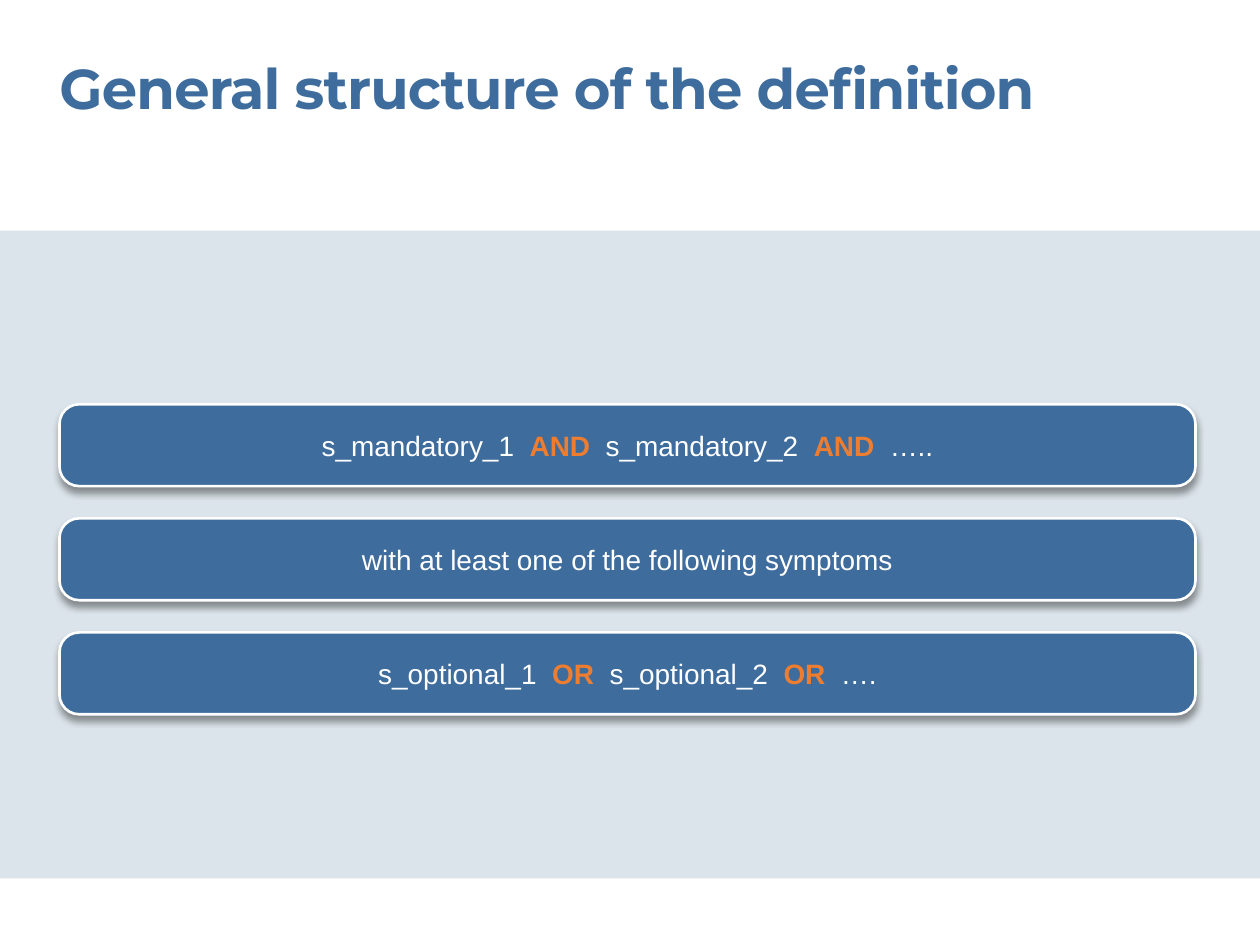
from lxml.etree import SubElement
from pptx import Presentation
from pptx.dml.color import RGBColor
from pptx.enum.shapes import MSO_SHAPE
from pptx.enum.text import MSO_ANCHOR, MSO_AUTO_SIZE, PP_ALIGN
from pptx.oxml.ns import qn
from pptx.util import Cm, Pt

BLUE, ORANGE, WHITE, PALE = "3D6C9D", "ED7D31", "FFFFFF", "DBE4EA"
OPERATORS = ("AND", "OR")
RULES = [
    ["s_mandatory_1  ", "AND", "  s_mandatory_2  ", "AND", "  ….."],
    ["with at least one of the following symptoms"],
    ["s_optional_1  ", "OR", "  s_optional_2  ", "OR", "  …."],
]


def color(value):
    return RGBColor.from_string(value)


def add_text(paragraph, text, *, size, font, fill, bold=False, spacing=None):
    run = paragraph.add_run()
    run.text = text
    run.font.size = Pt(size)
    run.font.name = font
    run.font.bold = bold
    run.font.color.rgb = color(fill)
    if spacing is not None:
        run._r.get_or_add_rPr().set("spc", str(round(spacing * 100)))


class DefinitionSlide:
    """Draws the elements of the definition slide in one shared style."""

    heading_font = "Montserrat"
    body_font = "Arial"

    def __init__(self, slide):
        self.slide = slide

    def block(self, kind, left, top, width, height, fill):
        shape = self.slide.shapes.add_shape(
            kind, Cm(left), Cm(top), Cm(width), Cm(height))
        shape.shadow.inherit = False
        shape.fill.solid()
        shape.fill.fore_color.rgb = color(fill)
        shape.line.fill.background()
        return shape

    def band(self, left, top, width, height):
        return self.block(MSO_SHAPE.RECTANGLE, left, top, width, height, PALE)

    def title(self, text, left, top, width, height):
        box = self.slide.shapes.add_textbox(
            Cm(left), Cm(top), Cm(width), Cm(height))
        frame = box.text_frame
        frame.word_wrap = True
        frame.auto_size = MSO_AUTO_SIZE.SHAPE_TO_FIT_TEXT
        frame.margin_left = frame.margin_right = 0
        frame.margin_top = frame.margin_bottom = 0
        add_text(frame.paragraphs[0], text, size=32, font=self.heading_font,
                 fill=BLUE, bold=True, spacing=-0.5)

    def rule(self, parts, left, top, width, height):
        shape = self.block(
            MSO_SHAPE.ROUNDED_RECTANGLE, left, top, width, height, BLUE)
        shape.adjustments[0] = 0.24
        shape.line.color.rgb = color(WHITE)
        shape.line.width = Pt(1.5)
        self.drop_shadow(shape)
        frame = shape.text_frame
        frame.word_wrap = True
        frame.vertical_anchor = MSO_ANCHOR.MIDDLE
        paragraph = frame.paragraphs[0]
        paragraph.alignment = PP_ALIGN.CENTER
        for part in parts:
            operator = part in OPERATORS
            add_text(paragraph, part, size=16, font=self.body_font,
                     fill=ORANGE if operator else WHITE, bold=operator)

    def drop_shadow(self, shape):
        effects = shape._element.spPr.find(qn("a:effectLst"))
        shadow = SubElement(
            effects, qn("a:outerShdw"), blurRad=str(Pt(4)), dist=str(Pt(3)),
            dir=str(90 * 60000), rotWithShape="0")
        black = SubElement(shadow, qn("a:srgbClr"), val="000000")
        SubElement(black, qn("a:alpha"), val="40000")


def main():
    presentation = Presentation()
    presentation.slide_width, presentation.slide_height = Cm(25.4), Cm(19.05)
    slide = presentation.slides.add_slide(presentation.slide_layouts[6])
    definition = DefinitionSlide(slide)
    definition.band(0, 4.65, 25.4, 13.06)
    definition.title("General structure of the definition",
                     1.2, 1.07, 20.57, 1.37)
    for index, parts in enumerate(RULES):
        definition.rule(parts, 1.2, 8.15 + 2.3 * index, 22.9, 1.65)
    presentation.save("out.pptx")


if __name__ == "__main__":
    main()
